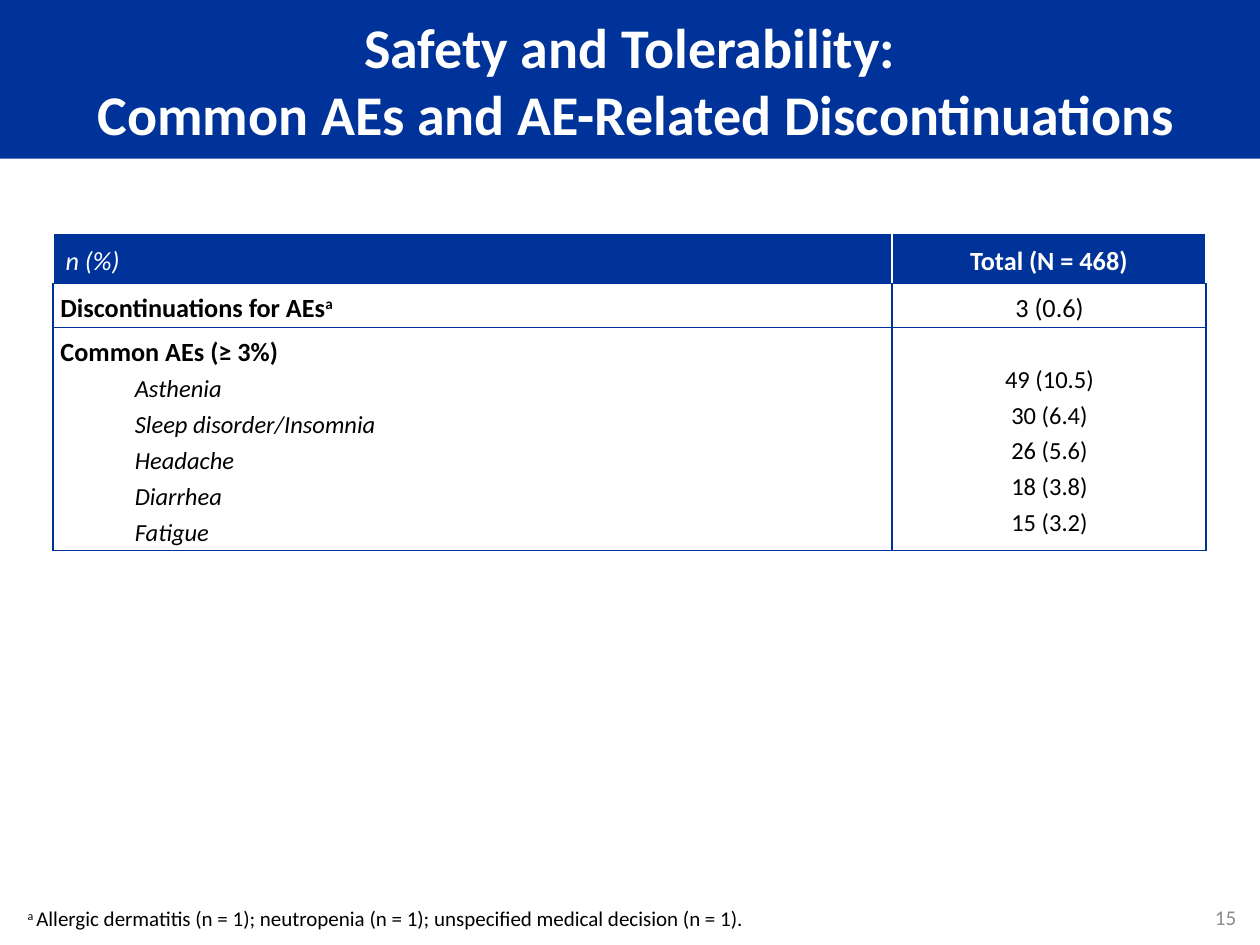
from lxml import etree
from pptx import Presentation
from pptx.dml.color import RGBColor
from pptx.enum.text import MSO_ANCHOR, MSO_AUTO_SIZE, PP_ALIGN
from pptx.oxml.ns import qn
from pptx.util import Inches, Pt

LEFT, CENTER, RIGHT = PP_ALIGN.LEFT, PP_ALIGN.CENTER, PP_ALIGN.RIGHT
TOP, MIDDLE, BOTTOM = MSO_ANCHOR.TOP, MSO_ANCHOR.MIDDLE, MSO_ANCHOR.BOTTOM
NO_AUTOSIZE = MSO_AUTO_SIZE.NONE

COLORS = {"blue": "003399", "white": "FFFFFF", "black": "000000", "gray": "8C8C8C"}
FONT = "Calibri"
COMMON_EVENTS = [
    ("Asthenia", "49 (10.5)"),
    ("Sleep disorder/Insomnia", "30 (6.4)"),
    ("Headache", "26 (5.6)"),
    ("Diarrhea", "18 (3.8)"),
    ("Fatigue", "15 (3.2)"),
]


def write(paragraph, text, size=15, color="black", bold=False, italic=False,
          superscript=False, align=LEFT, spacing=None, indent=0):
    paragraph.alignment = align
    if spacing:
        paragraph.line_spacing = spacing
    if indent:
        properties = paragraph._p.get_or_add_pPr()
        properties.set("marL", "0")
        properties.set("indent", str(Inches(indent)))
    for position, part in enumerate(text.split("\v")):
        if position:
            paragraph.add_line_break()
        run = paragraph.add_run()
        run.text = part
        font = run.font
        font.name, font.size = FONT, Pt(size)
        font.bold, font.italic = bold, italic
        font.color.rgb = RGBColor.from_string(COLORS[color])
        if superscript:
            run._r.get_or_add_rPr().set("baseline", "30000")


class SlideBuilder:
    def __init__(self, presentation):
        self.slide = presentation.slides.add_slide(presentation.slide_layouts[1])

    def place(self, shape, left, top, width, height):
        shape.left, shape.top = Inches(left), Inches(top)
        shape.width, shape.height = Inches(width), Inches(height)

    def title(self, text, box):
        shape = self.slide.shapes.title
        self.place(shape, *box)
        shape.fill.solid()
        shape.fill.fore_color.rgb = RGBColor.from_string(COLORS["blue"])
        frame = shape.text_frame
        frame.vertical_anchor, frame.auto_size = MIDDLE, NO_AUTOSIZE
        write(frame.paragraphs[0], text, size=32, color="white", bold=True, align=CENTER)

    def footnote(self, mark, text, box):
        shape = self.slide.placeholders[1]
        self.place(shape, *box)
        frame = shape.text_frame
        frame.margin_left = frame.margin_right = frame.margin_top = frame.margin_bottom = 0
        frame.vertical_anchor, frame.auto_size, frame.word_wrap = BOTTOM, NO_AUTOSIZE, False
        paragraph = frame.paragraphs[0]
        paragraph.space_before = Pt(0)
        properties = paragraph._p.get_or_add_pPr()
        properties.set("marL", "0")
        properties.set("indent", "0")
        etree.SubElement(properties, qn("a:buNone"))
        write(paragraph, mark, size=12, superscript=True)
        write(paragraph, text, size=12)

    def page_number(self, text, box):
        shape = self.slide.shapes.add_textbox(*map(Inches, box))
        frame = shape.text_frame
        frame.vertical_anchor, frame.word_wrap = MIDDLE, False
        write(frame.paragraphs[0], text, size=12, color="gray", align=RIGHT)

    def table(self, left, top, widths, heights):
        shape = self.slide.shapes.add_table(
            len(heights), len(widths), Inches(left), Inches(top),
            Inches(sum(widths)), Inches(sum(heights)))
        table = shape.table
        for column, width in zip(table.columns, widths):
            column.width = Inches(width)
        for row, height in zip(table.rows, heights):
            row.height = Inches(height)
        return table

    def cell(self, cell, paragraphs, header=False, anchor=TOP, margin_top=0.02, align=LEFT):
        cell.vertical_anchor = anchor
        if not header:
            cell.margin_left, cell.margin_right = Inches(0.06), Inches(0.05)
            cell.margin_top, cell.margin_bottom = Inches(margin_top), Inches(0.02)
        sides = dict.fromkeys(("L", "R", "T", "B"), "blue")
        if header:
            sides.update(L="white", R="white", T="white")
        for side, color in sides.items():
            self.border(cell, side, color)
        cell.fill.solid()
        cell.fill.fore_color.rgb = RGBColor.from_string(COLORS["blue" if header else "white"])
        frame = cell.text_frame
        for position, runs in enumerate(paragraphs):
            paragraph = frame.add_paragraph() if position else frame.paragraphs[0]
            for text, style in runs:
                write(paragraph, text, align=align, spacing=1.2, **style)

    def border(self, cell, side, color):
        line = etree.SubElement(cell._tc.get_or_add_tcPr(), qn(f"a:ln{side}"), w=str(Pt(1)))
        fill = etree.SubElement(line, qn("a:solidFill"))
        etree.SubElement(fill, qn("a:srgbClr"), val=COLORS[color])


def main():
    presentation = Presentation()
    presentation.slide_width, presentation.slide_height = Inches(10), Inches(7.5)
    builder = SlideBuilder(presentation)
    builder.title("Safety and Tolerability:\v Common AEs and AE-Related Discontinuations",
                  (0, 0, 10, 1.26))
    builder.page_number("15", (9.54, 7.13, 0.37, 0.3))
    builder.footnote(
        "a ", "Allergic dermatitis (n = 1); neutropenia (n = 1); unspecified medical decision (n = 1).",
        (0.22, 7.19, 5.76, 0.2))

    table = builder.table(0.42, 1.85, [6.66, 2.49], [0.4, 0.35, 1.77])
    bold = {"bold": True}
    event_style = {"size": 14, "italic": True, "indent": 0.59}
    builder.cell(table.cell(0, 0), [[("n (%)", {"color": "white", "italic": True})]],
                 header=True, anchor=BOTTOM)
    builder.cell(table.cell(0, 1), [[("Total (N = 468)", {"color": "white", "bold": True})]],
                 header=True, align=CENTER)
    builder.cell(table.cell(1, 0), [[("Discontinuations for AEs", bold),
                                     ("a", {"bold": True, "superscript": True})]])
    builder.cell(table.cell(1, 1), [[("3 (0.6)", {})]], align=CENTER)
    builder.cell(table.cell(2, 0), [[("Common AEs (≥ 3%)", bold)]]
                 + [[(event, event_style)] for event, _ in COMMON_EVENTS])
    builder.cell(table.cell(2, 1), [[(count, {"size": 14})] for _, count in COMMON_EVENTS],
                 margin_top=0.25, align=CENTER)
    presentation.save("out.pptx")


if __name__ == "__main__":
    main()
